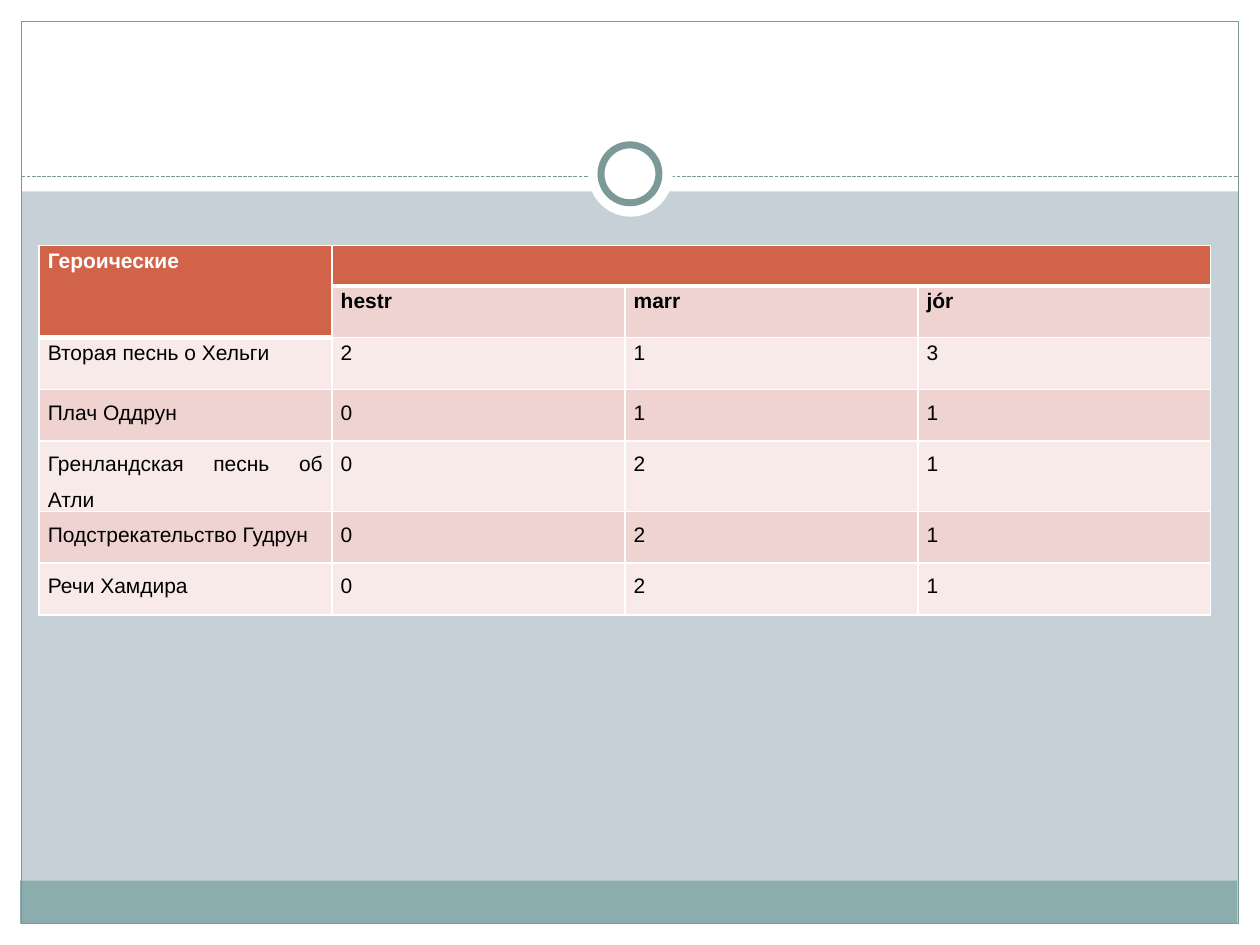
from lxml.etree import SubElement
from pptx import Presentation
from pptx.dml.color import RGBColor
from pptx.enum.dml import MSO_LINE
from pptx.enum.shapes import MSO_CONNECTOR, MSO_SHAPE
from pptx.enum.text import PP_ALIGN
from pptx.oxml.ns import qn
from pptx.util import Inches, Pt

WHITE = RGBColor(0xFF, 0xFF, 0xFF)
BLACK = RGBColor(0, 0, 0)
BLUE = RGBColor(0xC5, 0xD1, 0xD7)
TEAL = RGBColor(0x8C, 0xAD, 0xAE)
GREY = RGBColor(0x7C, 0x99, 0x9A)
RED = RGBColor(0xD1, 0x63, 0x49)
PINK = RGBColor(0xEE, 0xD3, 0xD0)
PALE = RGBColor(0xF7, 0xEA, 0xE9)

ROWS = [
    ("Героические", "", "", ""),
    ("", "hestr", "marr", "jór"),
    ("Вторая песнь о Хельги", "2", "1", "3"),
    ("Плач Оддрун", "0", "1", "1"),
    ("Гренландская песнь об Атли", "0", "2", "1"),
    ("Подстрекательство Гудрун", "0", "2", "1"),
    ("Речи Хамдира", "0", "2", "1"),
]


def write(frame, text, color=BLACK, bold=False, space=1.5, size=12, font="Arial"):
    para = frame.paragraphs[0]
    para.alignment = PP_ALIGN.JUSTIFY
    para.line_spacing = space
    run = para.add_run()
    run.text = text
    run.font.name = font
    run.font.size = Pt(size)
    run.font.bold = bold
    run.font.color.rgb = color


def edge(cell, side, width):
    """Draw one white border; side is L, R, T or B."""
    props = cell._tc.get_or_add_tcPr()
    line = SubElement(props, qn(f"a:ln{side}"), w=str(Pt(width)))
    fill = SubElement(line, qn("a:solidFill"))
    SubElement(fill, qn("a:srgbClr"), val=str(WHITE))


class Deck:
    def __init__(self):
        self.file = Presentation()
        self.file.slide_width = Inches(10)
        self.file.slide_height = Inches(7.5)
        self.slide = self.file.slides.add_slide(self.file.slide_layouts[6])
        back = self.slide.background.fill
        back.solid()
        back.fore_color.rgb = BLUE

    def shape(self, left, top, width, height, fill=None, line=None, weight=0.75,
              kind=MSO_SHAPE.RECTANGLE):
        item = self.slide.shapes.add_shape(
            kind, Inches(left), Inches(top), Inches(width), Inches(height))
        item.shadow.inherit = False
        if fill is None:
            item.fill.background()
        else:
            item.fill.solid()
            item.fill.fore_color.rgb = fill
        if line is None:
            item.line.fill.background()
        else:
            item.line.color.rgb = line
            item.line.width = Pt(weight)

    def ring(self, left, top, size, **style):
        self.shape(left, top, size, size, kind=MSO_SHAPE.OVAL, **style)

    def rule(self, left, right, top):
        """Draw a dashed level line."""
        item = self.slide.shapes.add_connector(
            MSO_CONNECTOR.STRAIGHT, Inches(left), Inches(top), Inches(right), Inches(top))
        item.line.color.rgb = GREY
        item.line.width = Pt(0.75)
        item.line.dash_style = MSO_LINE.SQUARE_DOT
        SubElement(item._element.spPr, qn("a:effectLst"))

    def table(self, left, top, width, rows):
        count = len(rows[0])
        heights = [0.32] + [0.41] * (len(rows) - 1)
        grid = self.slide.shapes.add_table(
            len(rows), count, Inches(left), Inches(top),
            Inches(width), Inches(sum(heights))).table
        grid.first_row = grid.horz_banding = False
        for col in grid.columns:
            col.width = Inches(width / count)
        for r, row in enumerate(rows):
            grid.rows[r].height = Inches(heights[r])
            for c, text in enumerate(row):
                self.cell(grid.cell(r, c), text, r, c)
        grid.cell(0, 0).merge(grid.cell(1, 0))
        grid.cell(0, 1).merge(grid.cell(0, count - 1))

    def cell(self, cell, text, r, c):
        head = r == 0 or (r == 1 and c == 0)
        cell.margin_left = cell.margin_right = Inches(0.07)
        cell.margin_top = cell.margin_bottom = 0
        for side in "LRT":
            edge(cell, side, 1)
        edge(cell, "B", 3 if head else 1)
        cell.fill.solid()
        cell.fill.fore_color.rgb = RED if head else PINK if r % 2 else PALE
        if text:
            write(cell.text_frame, text, color=WHITE if head else BLACK,
                  bold=r < 2, space=1.15 if r < 3 else 1.5)


def main():
    deck = Deck()
    deck.shape(0, 7.33, 10, 0.17, fill=WHITE)
    deck.shape(0, 0, 10, 1.52, fill=WHITE)
    for left in (0, 9.83):
        deck.shape(left, 0, 0.17, 7.5, fill=WHITE)
    deck.shape(0.16, 6.99, 9.66, 0.34, fill=TEAL)
    deck.shape(0.17, 0.17, 9.66, 7.16, line=GREY)
    deck.rule(0.17, 9.83, 1.4)
    deck.ring(4.67, 1.05, 0.67, fill=WHITE)
    deck.ring(4.77, 1.15, 0.46, fill=WHITE, line=GREY, weight=4)
    deck.table(0.31, 1.95, 9.3, ROWS)
    deck.file.save("out.pptx")


if __name__ == "__main__":
    main()
